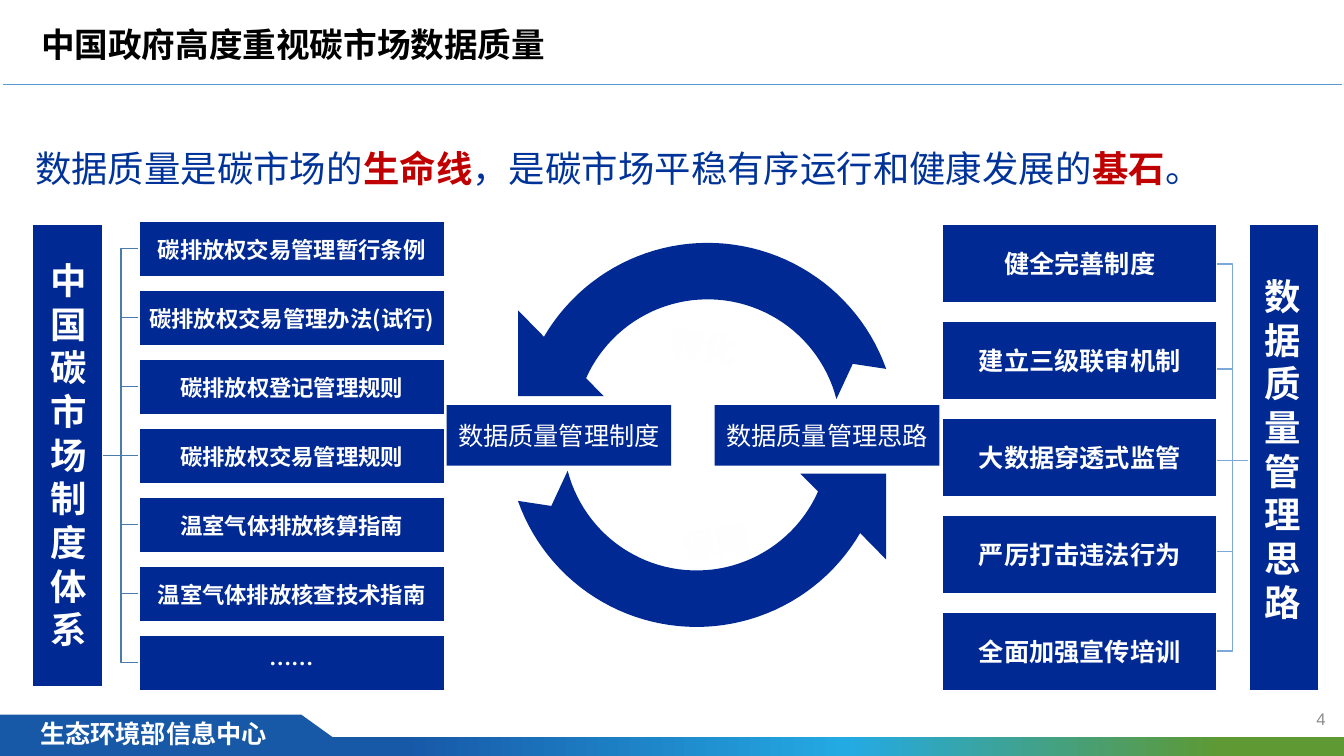
import math
from dataclasses import dataclass, field

from lxml import etree
from pptx import Presentation
from pptx import util as u
from pptx.dml import color
from pptx.enum import shapes, text
from pptx.oxml import ns

CELL = u.Inches(0.1)  # side of one grid column and row
COLUMNS, ROWS = 133.33, 75
CJK = "Noto Sans CJK SC"
NAVY, WHITE, BLUE, RED = "002993", "FFFFFF", "003399", "C00000"
Point = tuple[float, float]
Area = tuple[float, float, float, float]


@dataclass
class Words:
    """Spans of (text, colour, bold) that share one paragraph format."""
    spans: list[tuple[str, str, bool]]
    size: float
    font: str = CJK
    outline: str | None = None
    paragraph: dict = field(default_factory=dict)
    frame: dict = field(default_factory=dict)


@dataclass
class Bracket:
    """A stem at x that forks, through a spine, to the target rows."""
    stem: float
    tips: float
    middle: float
    targets: list[float]
    colour: str


def grid(cells: float) -> int:
    return round(cells * CELL)


def rgb(value: str) -> color.RGBColor:
    return color.RGBColor.from_string(value)


def apply(target, formats: dict) -> None:
    for name, value in formats.items():
        setattr(target, name, value)


def write(box, words: Words) -> None:
    apply(box.text_frame, {"word_wrap": True, **words.frame})
    para = box.text_frame.paragraphs[0]
    apply(para, {"alignment": text.PP_ALIGN.LEFT, **words.paragraph})
    for content, colour, bold in words.spans:
        span = para.add_run()
        span.text = content
        apply(span.font, {"size": u.Pt(words.size), "bold": bold, "name": words.font})
        span.font.color.rgb = rgb(colour)
        props = span.font._element
        east_asian = etree.Element(ns.qn("a:ea"), typeface=CJK)
        props.find(ns.qn("a:latin")).addnext(east_asian)
        if words.outline:
            props.set("spc", "50")
            line = etree.Element(ns.qn("a:ln"), w=str(u.Pt(0.75)))
            fill = etree.SubElement(line, ns.qn("a:solidFill"))
            etree.SubElement(fill, ns.qn("a:srgbClr"), val=words.outline)
            props.insert(0, line)


def add_text(page, area: Area, words: Words, rotation: float = 0) -> None:
    box = page.shapes.add_textbox(*map(grid, area))
    box.rotation = rotation
    write(box, words)


def paint(shape, fill: str | None, line: str | None) -> None:
    shape.shadow.inherit = False
    for part, colour in ((shape.fill, fill), (shape.line.fill, line)):
        if colour:
            part.solid()
            part.fore_color.rgb = rgb(colour)
        else:
            part.background()
    if line:
        shape.line.width = u.Pt(1)


def add_panel(page, area: Area, words: Words | None = None, line: str | None = WHITE):
    panel = page.shapes.add_shape(shapes.MSO_SHAPE.RECTANGLE, *map(grid, area))
    paint(panel, NAVY, line)
    if words:
        write(panel, words)
    return panel


def add_outline(page, points: list[Point], fill: str | None = None, line: str | None = None) -> None:
    first, *rest = [(grid(x), grid(y)) for x, y in points]
    builder = page.shapes.build_freeform(*first)
    builder.add_line_segments(rest, close=fill is not None)
    paint(builder.convert_to_shape(), fill, line)


def add_line(page, start: Point, end: Point, colour: str, width: float) -> None:
    line = page.shapes.add_connector(shapes.MSO_CONNECTOR.STRAIGHT, *map(grid, start + end))
    line.line.color.rgb = rgb(colour)
    line.line.width = u.Pt(width)
    etree.SubElement(line._element.spPr, ns.qn("a:effectLst"))


def add_bracket(page, bracket: Bracket) -> None:
    start = (bracket.stem, bracket.middle)
    spine = (bracket.stem + bracket.tips) / 2
    for row in bracket.targets:
        tip = (bracket.tips, row)
        if row == bracket.middle:
            add_line(page, start, tip, bracket.colour, 1)
        else:
            corners = [start, (spine, bracket.middle), (spine, row), tip]
            add_outline(page, corners, line=bracket.colour)


def arc(centre: Point, radius: float, start: float, end: float, steps: int = 48) -> list[Point]:
    """Points on a circle between two angles in degrees, clockwise from the right."""
    angles = [math.radians(start + (end - start) * i / steps) for i in range(steps + 1)]
    return [(centre[0] + radius * math.cos(a), centre[1] + radius * math.sin(a)) for a in angles]


def draw_master(page) -> None:
    add_outline(page, [(0, 70.9), (29.9, 70.9), (35.6, ROWS), (0, ROWS)], fill="1758A7")
    band = add_panel(page, (0, 73.1, COLUMNS, 1.9), line=None)
    band.fill.gradient()
    band.fill.gradient_angle = 0
    stops = band.fill._fill._gradFill.find(ns.qn("a:gsLst"))
    stops.clear()
    for share, colour in ((30, "1758A7"), (63, "24AAE3"), (91, "5E9933")):
        stop = etree.SubElement(stops, ns.qn("a:gs"), pos=str(share * 1000))
        etree.SubElement(stop, ns.qn("a:srgbClr"), val=colour)
    add_text(page, (3, 70.8, 26.4, 4), Words([("生态环境部信息中心", WHITE, True)], 18, "Arial"))
    add_line(page, (0.3, 8.4), (133.1, 8.4), "5B9BD5", 0.5)
    add_text(page, (102.5, 69.3, 30, 4), Words(
        [("4", "8C8C8C", False)], 12, "Arial", paragraph={"alignment": text.PP_ALIGN.RIGHT},
        frame={"vertical_anchor": text.MSO_ANCHOR.MIDDLE}))


def draw_list(page, area: Area, pitch: float, size: float, labels: list[str]) -> None:
    """A column of equal panels, the first one at the given area."""
    left, top, width, height = area
    inset = {f"margin_{side}": u.Inches(0.01) for side in ("left", "right", "top", "bottom")}
    for i, label in enumerate(labels):
        add_panel(page, (left, top + i * pitch, width, height), Words(
            [(label, WHITE, True)], size, paragraph={"alignment": text.PP_ALIGN.CENTER},
            frame={"vertical_anchor": text.MSO_ANCHOR.MIDDLE, **inset}))


def draw_pillar(page, area: Area, label_area: Area, label: str) -> None:
    add_panel(page, area)
    add_text(page, label_area, Words([(label, WHITE, True)], 26, paragraph={"line_spacing": u.Pt(31.2)}))


def draw_cycle(page) -> None:
    centre = (70.2, 42.9)
    upper = (arc(centre, 13.2, -156, -14.5) + [(84.6, 36.1), (87.9, 36.6)]
             + arc(centre, 18.8, -19.6, -149.7) + [(51.4, 30.8), (51.4, 39.3), (59.9, 39.3)])
    lower = [(139.3 - x, 86.3 - y) for x, y in upper]
    for arrow in (upper, lower):
        add_outline(page, arrow, fill=NAVY)
    for left, label in ((44.3, "数据质量管理制度"), (70.9, "数据质量管理思路")):
        add_panel(page, (left, 40.2, 22.3, 6), Words(
            [(label, WHITE, False)], 18, "Arial", paragraph={"alignment": text.PP_ALIGN.CENTER},
            frame={"vertical_anchor": text.MSO_ANCHOR.MIDDLE}), line=None)
    for left, top, turn, label in ((66.5, 49.5, 351, "保障"), (65.4, 33.6, 8.6, "转化")):
        add_text(page, (left, top, 31.9, 4), Words([(label, "FEFEFE", True)], 24, outline="5B9BD5"), turn)


def main() -> None:
    deck = Presentation()
    deck.slide_width, deck.slide_height = grid(COLUMNS), grid(ROWS)
    page = deck.slides.add_slide(deck.slide_layouts[6])
    draw_master(page)

    add_bracket(page, Bracket(123.9, 120.7, 45.7, [26.2, 36.6, 45.7, 54.7, 64.6], "7AA9DA"))
    draw_pillar(page, (123.9, 22.3, 6.9, 46.2), (124.5, 26.7, 4.3, 36), "数据质量管理思路")
    draw_list(page, (93.5, 22.3, 27.2, 7.75), 9.62, 18, [
        "健全完善制度", "建立三级联审机制", "大数据穿透式监管", "严厉打击违法行为", "全面加强宣传培训"])

    rows = [45.2 + 6.84 * i for i in range(-3, 4)]
    add_bracket(page, Bracket(10.2, 13.8, 45.2, rows, "497CAB"))
    draw_pillar(page, (3.2, 22.3, 7, 45.8), (4, 25.1, 4.3, 40.4), "中国碳市场制度体系")
    draw_list(page, (13.8, 22, 30.3, 5.5), 6.84, 16, [
        "碳排放权交易管理暂行条例", "碳排放权交易管理办法(试行)", "碳排放权登记管理规则",
        "碳排放权交易管理规则", "温室气体排放核算指南", "温室气体排放核查技术指南", "……"])

    draw_cycle(page)
    add_text(page, (2.5, 11.8, 128.3, 6.8), Words([
        ("数据质量是碳市场的", BLUE, False), ("生命线", RED, True),
        ("，是碳市场平稳有序运行和健康发展的", BLUE, False), ("基石", RED, True), ("。", BLUE, False)],
        26, paragraph={"alignment": text.PP_ALIGN.JUSTIFY, "line_spacing": 1.5}))
    add_text(page, (3.1, 1.9, 80.8, 5), Words([("中国政府高度重视碳市场数据质量", "000000", True)], 24))
    deck.save("out.pptx")


if __name__ == "__main__":
    main()
